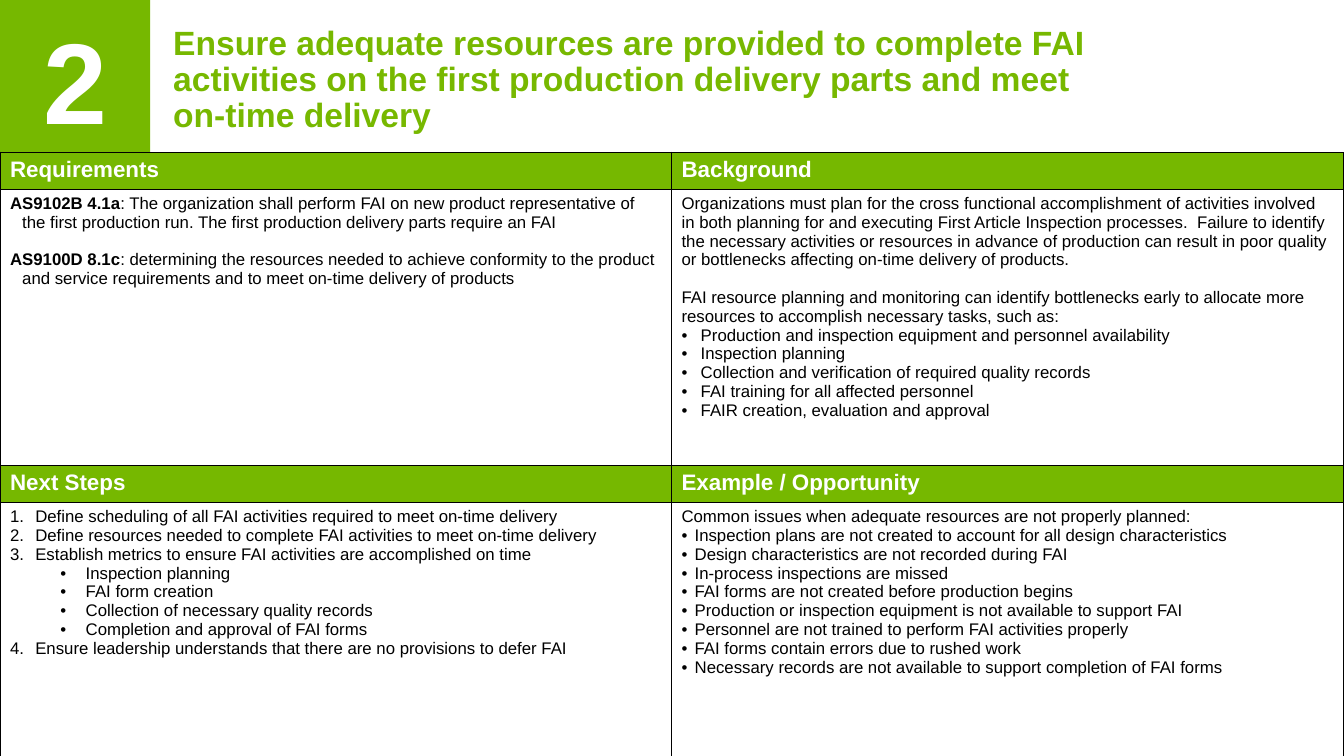
from dataclasses import dataclass

import pptx
import pptx.dml.color
import pptx.enum.shapes
import pptx.enum.text
import pptx.util
from lxml import etree
from pptx.oxml.ns import qn

Inches = pptx.util.Inches
Pt = pptx.util.Pt
RGBColor = pptx.dml.color.RGBColor
Align = pptx.enum.text.PP_ALIGN
Anchor = pptx.enum.text.MSO_ANCHOR

GREEN = RGBColor(0x76, 0xB8, 0x00)
TITLE_GREEN = RGBColor(0x77, 0xB8, 0x00)
WHITE = RGBColor(0xFF, 0xFF, 0xFF)
BLACK = RGBColor(0x00, 0x00, 0x00)
FONT = "Arial"
SECTION_GAP = 13.4


@dataclass(frozen=True)
class Line:
    text: str
    lead: str = ""
    bullet: str = ""
    left: float = 0
    hanging: float = 0
    level: int = 0
    gap: float = 0


@dataclass(frozen=True)
class Section:
    heading: str
    lines: list[Line]


def bullets(left: float, hanging: float, texts: list[str], level: int = 0) -> list[Line]:
    return [Line(text, bullet="•", left=left, hanging=hanging, level=level) for text in texts]


def numbered(texts: list[str]) -> list[Line]:
    return [Line(text, bullet="1.", left=0.25, hanging=0.25) for text in texts]


REQUIREMENTS = Section("Requirements", [
    Line(": The organization shall perform FAI on new product representative of the first "
         "production run. The first production delivery parts require an FAI",
         lead="AS9102B 4.1a", left=0.12, hanging=0.12),
    Line(": determining the resources needed to achieve conformity to the product and service "
         "requirements and to meet on-time delivery of products",
         lead="AS9100D 8.1c", left=0.12, hanging=0.12, gap=SECTION_GAP),
])
BACKGROUND = Section("Background", [
    Line("Organizations must plan for the cross functional accomplishment of activities involved "
         "in both planning for and executing First Article Inspection processes.  Failure to "
         "identify the necessary activities or resources in advance of production can result in "
         "poor quality or bottlenecks affecting on-time delivery of products."),
    Line("FAI resource planning and monitoring can identify bottlenecks early to allocate more "
         "resources to accomplish necessary tasks, such as:", gap=SECTION_GAP),
    *bullets(0.19, 0.19, [
        "Production and inspection equipment and personnel availability",
        "Inspection planning",
        "Collection and verification of required quality records",
        "FAI training for all affected personnel",
        "FAIR creation, evaluation and approval",
    ]),
])
NEXT_STEPS = Section("Next Steps", [
    *numbered([
        "Define scheduling of all FAI activities required to meet on-time delivery",
        "Define resources needed to complete FAI activities to meet on-time delivery",
        "Establish metrics to ensure FAI activities are accomplished on time",
    ]),
    *bullets(0.75, 0.25, [
        "Inspection planning",
        "FAI form creation",
        "Collection of necessary quality records",
        "Completion and approval of FAI forms",
    ], level=1),
    *numbered(["Ensure leadership understands that there are no provisions to defer FAI"]),
])
EXAMPLE = Section("Example / Opportunity", [
    Line("Common issues when adequate resources are not properly planned:"),
    *bullets(0.13, 0.13, [
        "Inspection plans are not created to account for all design characteristics",
        "Design characteristics are not recorded during FAI",
        "In-process inspections are missed",
        "FAI forms are not created before production begins",
        "Production or inspection equipment is not available to support FAI",
        "Personnel are not trained to perform FAI activities properly",
        "FAI forms contain errors due to rushed work",
        "Necessary records are not available to support completion of FAI forms",
    ]),
])
SECTION_GRID = [[REQUIREMENTS, BACKGROUND], [NEXT_STEPS, EXAMPLE]]
COLUMN_WIDTHS = [6.66, 6.67]
ROW_HEIGHTS = [0.36, 2.74, 0.36, 2.53]


def add_text(paragraph, text: str, *, size: float, color: RGBColor = BLACK,
             bold: bool = False) -> None:
    run = paragraph.add_run()
    run.text = text
    run.font.name = FONT
    run.font.size = Pt(size)
    run.font.bold = bold
    run.font.color.rgb = color


def format_list(paragraph, line: Line) -> None:
    """Set the hanging indent and the bullet or number of a paragraph."""
    properties = paragraph._p.get_or_add_pPr()
    properties.set("marL", str(Inches(line.left)))
    properties.set("indent", str(-Inches(line.hanging)))
    if line.bullet:
        etree.SubElement(properties, qn("a:buFont"), typeface=FONT)
    if line.bullet == "1.":
        etree.SubElement(properties, qn("a:buAutoNum"), type="arabicPeriod")
    elif line.bullet:
        etree.SubElement(properties, qn("a:buChar"), char=line.bullet)


def add_borders(cell) -> None:
    properties = cell._tc.get_or_add_tcPr()
    for side in ("lnL", "lnR", "lnT", "lnB"):
        border = etree.SubElement(properties, qn(f"a:{side}"), w=str(Pt(1)))
        fill = etree.SubElement(border, qn("a:solidFill"))
        etree.SubElement(fill, qn("a:srgbClr"), val=str(BLACK))


def fill_heading(cell, heading: str) -> None:
    add_borders(cell)
    cell.fill.solid()
    cell.fill.fore_color.rgb = GREEN
    add_text(cell.text_frame.paragraphs[0], heading, size=16, color=WHITE, bold=True)


def fill_body(cell, lines: list[Line]) -> None:
    add_borders(cell)
    cell.fill.background()
    frame = cell.text_frame
    for index, line in enumerate(lines):
        paragraph = frame.add_paragraph() if index else frame.paragraphs[0]
        format_list(paragraph, line)
        paragraph.level = line.level
        if line.gap:
            paragraph.space_before = Pt(line.gap)
        if line.lead:
            add_text(paragraph, line.lead, size=12, bold=True)
        add_text(paragraph, line.text, size=12)


def add_title(slide, text: str) -> None:
    box = slide.shapes.add_textbox(Inches(1.62), Inches(0.19), Inches(9.24), Inches(1.22))
    frame = box.text_frame
    frame.word_wrap = True
    frame.vertical_anchor = Anchor.MIDDLE
    frame.paragraphs[0].line_spacing = 0.9
    add_text(frame.paragraphs[0], text, size=24, color=TITLE_GREEN, bold=True)


def add_number(slide, number: str) -> None:
    shape = slide.shapes.add_shape(pptx.enum.shapes.MSO_SHAPE.RECTANGLE,
                                   0, 0, Inches(1.49), Inches(1.51))
    shape.shadow.inherit = False
    shape.fill.solid()
    shape.fill.fore_color.rgb = GREEN
    shape.line.fill.background()
    shape.text_frame.vertical_anchor = Anchor.BOTTOM
    paragraph = shape.text_frame.paragraphs[0]
    paragraph.alignment = Align.CENTER
    add_text(paragraph, number, size=82, color=WHITE, bold=True)


def add_sections(slide) -> None:
    table = slide.shapes.add_table(len(ROW_HEIGHTS), len(COLUMN_WIDTHS), 0, Inches(1.51),
                                   Inches(sum(COLUMN_WIDTHS)), Inches(sum(ROW_HEIGHTS))).table
    table.first_row = table.horz_banding = False
    for column, width in zip(table.columns, COLUMN_WIDTHS):
        column.width = Inches(width)
    for row, height in zip(table.rows, ROW_HEIGHTS):
        row.height = Inches(height)
    for band, sections in enumerate(SECTION_GRID):
        for column, section in enumerate(sections):
            fill_heading(table.cell(2 * band, column), section.heading)
            fill_body(table.cell(2 * band + 1, column), section.lines)


def main() -> None:
    presentation = pptx.Presentation()
    presentation.slide_width = Inches(13.33)
    presentation.slide_height = Inches(7.5)
    slide = presentation.slides.add_slide(presentation.slide_layouts[6])
    add_title(slide, "Ensure adequate resources are provided to complete FAI activities on the "
                     "first production delivery parts and meet on-time delivery")
    add_number(slide, "2")
    add_sections(slide)
    presentation.save("out.pptx")


if __name__ == "__main__":
    main()
